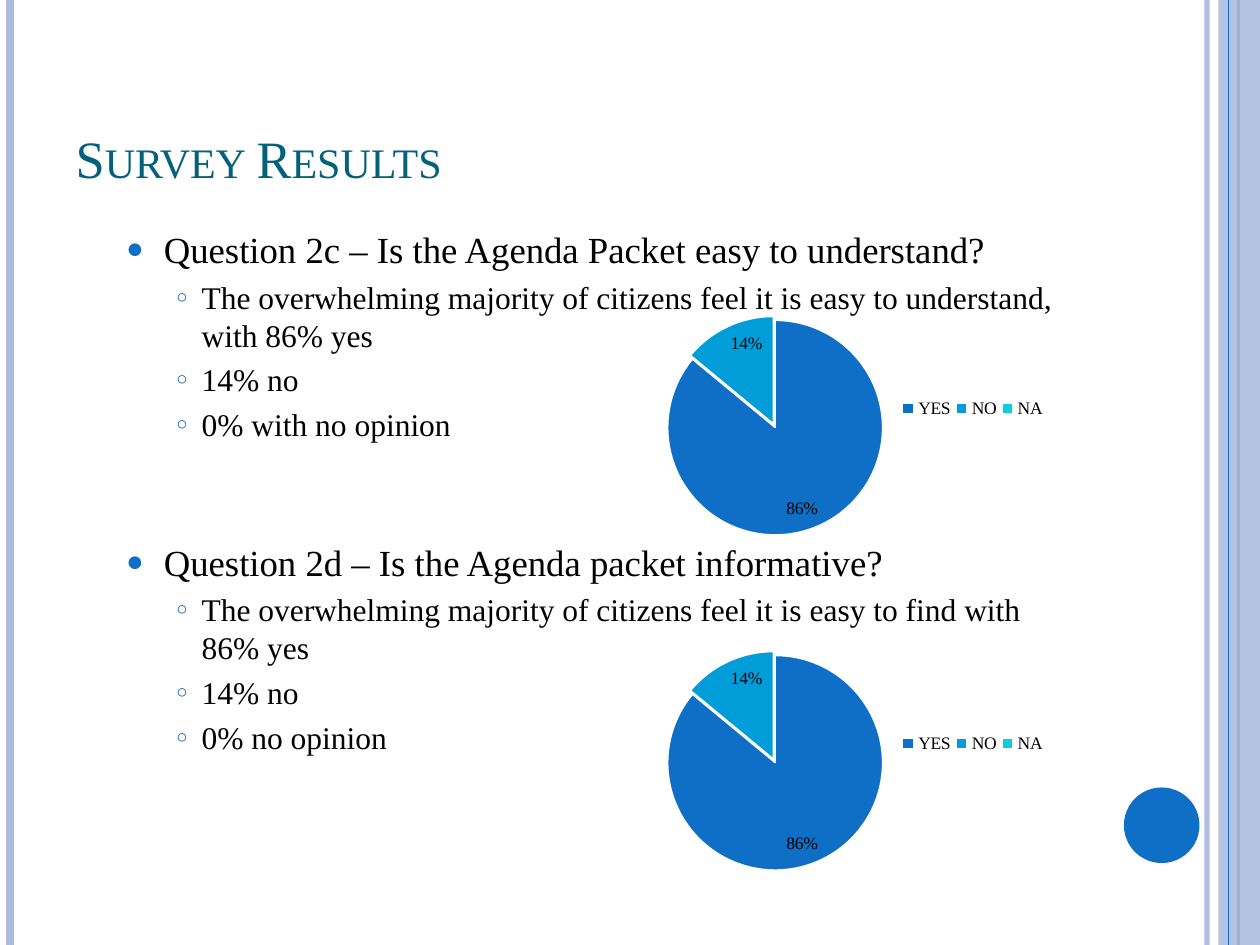
from lxml import etree
from pptx import Presentation
from pptx.chart.data import CategoryChartData
from pptx.dml.color import RGBColor
from pptx.enum.chart import XL_CHART_TYPE, XL_LABEL_POSITION, XL_LEGEND_POSITION
from pptx.enum.shapes import MSO_CONNECTOR, MSO_SHAPE
from pptx.enum.text import MSO_ANCHOR, MSO_AUTO_SIZE, PP_ALIGN
from pptx.oxml.ns import qn
from pptx.util import Inches, Pt

PIE = XL_CHART_TYPE.PIE
INSIDE_END = XL_LABEL_POSITION.INSIDE_END
LEGEND_TOP = XL_LEGEND_POSITION.TOP
STRAIGHT = MSO_CONNECTOR.STRAIGHT
RECTANGLE, OVAL = MSO_SHAPE.RECTANGLE, MSO_SHAPE.OVAL
ANCHOR_TOP, ANCHOR_BOTTOM = MSO_ANCHOR.TOP, MSO_ANCHOR.BOTTOM
NO_AUTOFIT = MSO_AUTO_SIZE.NONE
LEFT = PP_ALIGN.LEFT

FONT = "Times New Roman"
COLORS = {
    "title": "04617B", "text": "000000", "white": "FFFFFF",
    "blue": "0F6FC6", "sky": "009DD9", "aqua": "0BD0D9",
    "pale": "ABBBDF", "stripe": "9DB0DA", "sub_bullet": "0D62AF",
}
# level: (text size, left margin, hanging indent, bullet, bullet color, bullet size %)
LEVELS = {
    1: (21, 0.7, 0.3, "●", "blue", 80),
    2: (18, 1.0, 0.2, "○", "sub_bullet", 60),
}
QUESTIONS = [
    ("Question 2c – Is the Agenda Packet easy to understand?",
     ["The overwhelming majority of citizens feel it is easy to understand, with 86% yes",
      "14% no", "0% with no opinion"]),
    ("Question 2d – Is the Agenda packet informative?",
     ["The overwhelming majority of citizens feel it is easy to find with 86% yes",
      "14% no", "0% no opinion"]),
]
ANSWERS = {"YES": 86, "NO": 14, "NA": None}
SLICE_COLORS = ["blue", "sky", "aqua"]
CHART_TOPS = [2.42, 5.08]
QUESTION_GAP = 55


def rgb(name):
    return RGBColor.from_string(COLORS[name])


def set_opacity(element, percent):
    color = element.find(".//" + qn("a:srgbClr"))
    etree.SubElement(color, qn("a:alpha"), val=str(percent * 1000))


def set_layout(parent, position, bounds, inner=False):
    """Give a chart part a fixed place, in fractions of the chart."""
    for old in parent.findall(qn("c:layout")):
        parent.remove(old)
    layout = etree.Element(qn("c:layout"))
    manual = etree.SubElement(layout, qn("c:manualLayout"))
    if inner:
        etree.SubElement(manual, qn("c:layoutTarget"), val="inner")
    for tag in ("xMode", "yMode"):
        etree.SubElement(manual, qn("c:" + tag), val="edge")
    for tag, value in zip("xywh", bounds):
        etree.SubElement(manual, qn("c:" + tag), val=str(value))
    parent.insert(position, layout)


class SurveySlide:
    def __init__(self, presentation):
        self.slide = presentation.slides.add_slide(presentation.slide_layouts[1])
        self.shapes = self.slide.shapes

    def stripe(self, x, color, width, opacity=100):
        line = self.shapes.add_connector(
            STRAIGHT, Inches(x), Inches(0), Inches(x), Inches(7.5))
        line.line.color.rgb = rgb(color)
        line.line.width = Pt(width)
        properties = line._element.spPr
        set_opacity(properties, opacity)
        etree.SubElement(properties, qn("a:effectLst"))

    def shape(self, kind, bounds, color, opacity=100):
        shape = self.shapes.add_shape(kind, *map(Inches, bounds))
        shape.shadow.inherit = False
        shape.fill.solid()
        shape.fill.fore_color.rgb = rgb(color)
        shape.line.fill.background()
        set_opacity(shape._element.spPr, opacity)

    def place(self, placeholder, bounds, anchor):
        placeholder.left, placeholder.top, placeholder.width, placeholder.height = map(Inches, bounds)
        frame = placeholder.text_frame
        frame.word_wrap = True
        frame.auto_size = NO_AUTOFIT
        frame.vertical_anchor = anchor
        return frame

    def run(self, paragraph, text, size, color):
        paragraph.alignment = LEFT
        run = paragraph.add_run()
        run.text = text
        run.font.name = FONT
        run.font.size = Pt(size)
        run.font.color.rgb = rgb(color)
        return run

    def title(self, text, bounds):
        frame = self.place(self.shapes.title, bounds, ANCHOR_BOTTOM)
        run = self.run(frame.paragraphs[0], text, 30, "title")
        run.font._element.set("cap", "small")

    def bullet(self, paragraph, text, level, space_before):
        size, margin, hanging, mark, color, percent = LEVELS[level]
        paragraph.level = level
        paragraph.space_before = Pt(space_before)
        self.run(paragraph, text, size, "text")
        properties = paragraph._p.get_or_add_pPr()
        properties.set("marL", str(Inches(margin)))
        properties.set("indent", str(-Inches(hanging)))
        bullet_color = etree.SubElement(properties, qn("a:buClr"))
        etree.SubElement(bullet_color, qn("a:srgbClr"), val=COLORS[color])
        etree.SubElement(properties, qn("a:buSzPct"), val=str(percent * 1000))
        etree.SubElement(properties, qn("a:buFont"), typeface=FONT)
        etree.SubElement(properties, qn("a:buChar"), char=mark)

    def questions(self, questions, bounds):
        frame = self.place(self.slide.placeholders[1], bounds, ANCHOR_TOP)
        for index, (question, findings) in enumerate(questions):
            paragraph = frame.add_paragraph() if index else frame.paragraphs[0]
            self.bullet(paragraph, question, 1, QUESTION_GAP if index else 4)
            for finding in findings:
                self.bullet(frame.add_paragraph(), finding, 2, 4)

    def pie(self, answers, bounds):
        data = CategoryChartData()
        data.categories = list(answers)
        data.add_series("Series 1", list(answers.values()))
        chart = self.shapes.add_chart(PIE, *map(Inches, bounds), data).chart
        chart.has_title = False
        chart.font.name = FONT
        chart.font.size = Pt(10)
        chart.font.color.rgb = rgb("text")
        chart.has_legend = True
        chart.legend.position = LEGEND_TOP
        chart.legend.include_in_layout = False
        set_layout(chart.legend._element, 1, (0.59, 0.39, 0.24, 0.12))

        plot = chart.plots[0]
        plot.vary_by_categories = True
        set_layout(chart._chartSpace.chart.plotArea, 0, (0.22, 0.05, 0.35, 0.95), inner=True)
        series = plot.series[0]
        for index, color in enumerate(SLICE_COLORS):
            slice_format = series.points[index].format
            slice_format.fill.solid()
            slice_format.fill.fore_color.rgb = rgb(color)
            slice_format.line.color.rgb = rgb("white")
            slice_format.line.width = Pt(0.75)
        explosion = etree.Element(qn("c:explosion"), val="2")
        series._element.find(qn("c:dPt")).addprevious(explosion)

        plot.has_data_labels = True
        labels = plot.data_labels
        labels.show_percentage = True
        labels.show_value = False
        labels.number_format = "0%"
        labels.number_format_is_linked = False
        labels.position = INSIDE_END


def main():
    presentation = Presentation()
    presentation.slide_width, presentation.slide_height = Inches(10), Inches(7.5)
    survey = SurveySlide(presentation)
    survey.stripe(9.58, "pale", 3, 93)
    survey.stripe(0.08, "pale", 4.5)
    survey.shape(RECTANGLE, (9.67, 0, 0.33, 7.5), "pale", 87)
    survey.stripe(9.83, "stripe", 1.5)
    survey.stripe(9.75, "blue", 0.75)
    survey.shape(OVAL, (8.92, 6.25, 0.6, 0.6), "blue")
    survey.title("Survey Results", (0.5, 0.3, 8.17, 1.25))
    survey.questions(QUESTIONS, (0.5, 1.75, 8.17, 5.33))
    for top in CHART_TOPS:
        survey.pie(ANSWERS, (4.17, top, 5, 1.83))
    presentation.save("out.pptx")


if __name__ == "__main__":
    main()
